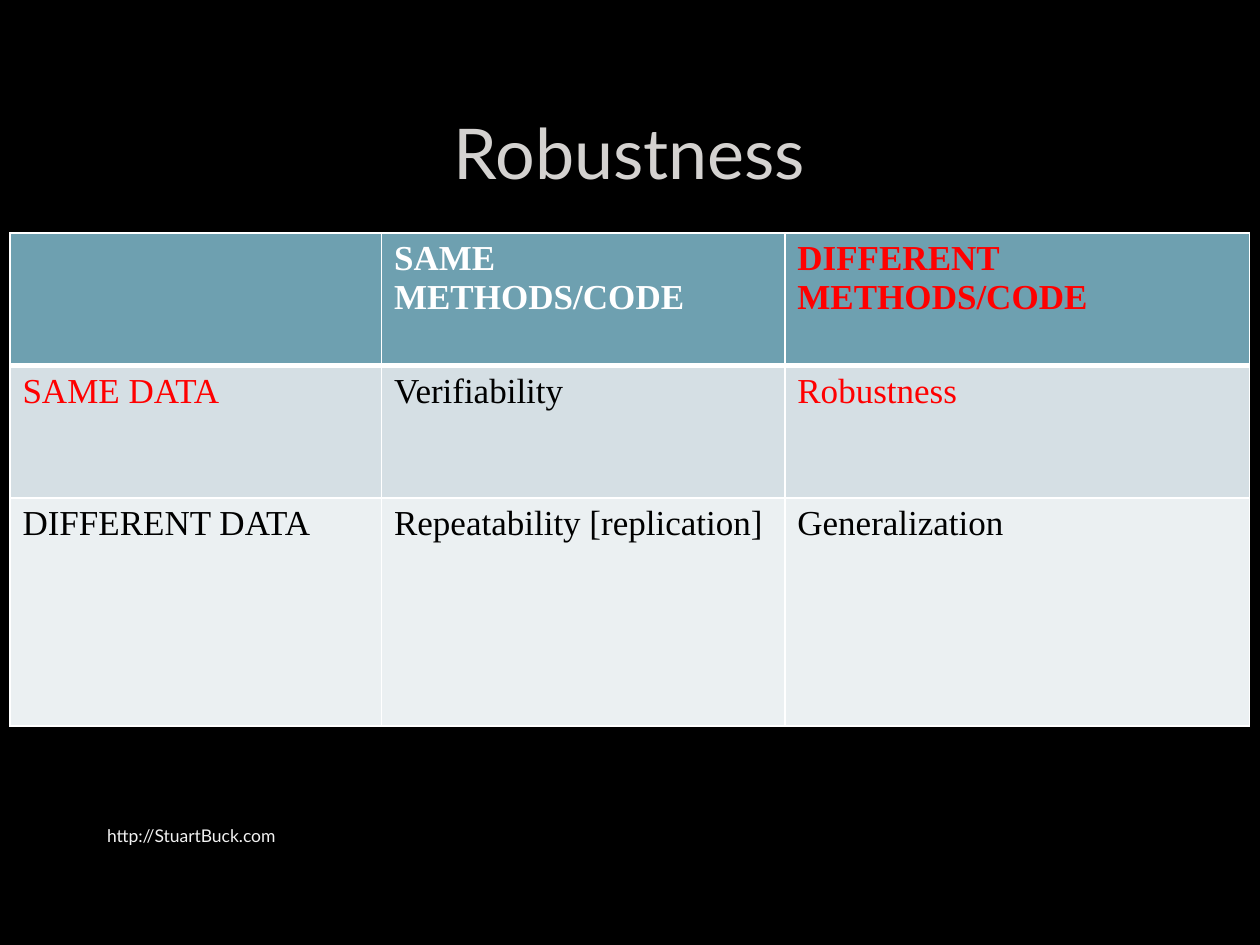
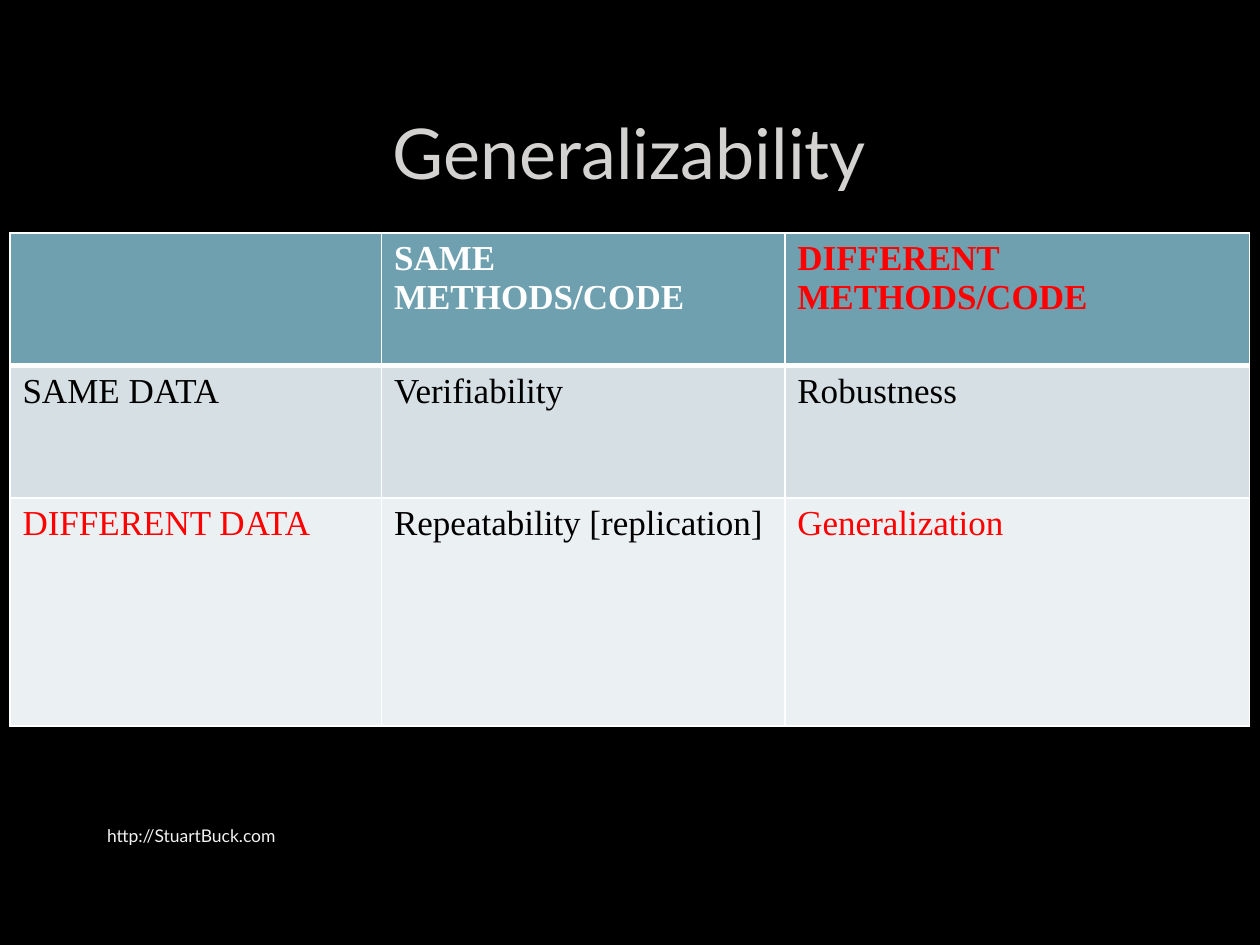
import dataclasses

import lxml.etree
import pptx
import pptx.dml.color
import pptx.enum.text
import pptx.oxml.ns
import pptx.util

Cm = pptx.util.Cm
Pt = pptx.util.Pt
qn = pptx.oxml.ns.qn

COLOURS = {
    "background": "000000",
    "title": "D4D2D0",
    "title_outline": "404040",
    "header": "6EA0B0",
    "same_data": "D5DFE4",
    "different_data": "EBF0F2",
    "border": "FFFFFF",
    "header_text": "FFFFFF",
    "body_text": "000000",
    "highlight": "FF0000",
    "address": "F2F2F2",
}
HEADING_FONT = "Lato"
TABLE_FONT = "Times New Roman"
COLUMN_WIDTHS = (7.49, 8.13, 9.37)
ROW_HEIGHTS = (2.67, 2.67, 4.6)
ROW_FILLS = ("header", "same_data", "different_data")
TERMS = (
    ("", "SAME METHODS/CODE", "DIFFERENT METHODS/CODE"),
    ("SAME DATA", "Verifiability", "Robustness"),
    ("DIFFERENT DATA", "Repeatability [replication]", "Generalization"),
)
HIGHLIGHTED_COLUMN = 2


@dataclasses.dataclass(frozen=True)
class Concept:
    title: str
    highlighted_row: int


@dataclasses.dataclass(frozen=True)
class Box:
    left: float
    top: float
    width: float
    height: float

    def lengths(self) -> tuple:
        return tuple(Cm(value) for value in dataclasses.astuple(self))


CONCEPTS = (Concept("Robustness", 1), Concept("Generalizability", 2))
TITLE_BOX = Box(1.91, 1.7, 21.56, 2.69)
TABLE_BOX = Box(0.2, 4.7, sum(COLUMN_WIDTHS), sum(ROW_HEIGHTS))
ADDRESS_BOX = Box(1.91, 16.33, 13.89, 1.02)


def rgb(name: str) -> pptx.dml.color.RGBColor:
    return pptx.dml.color.RGBColor.from_string(COLOURS[name])


def format_run(run, font: str, size: float, colour: str, bold: bool = False) -> None:
    run.font.name = font
    run.font.size = Pt(size)
    run.font.bold = bold
    run.font.color.rgb = rgb(colour)


def add_line_fill(line, colour: str):
    solid = lxml.etree.SubElement(line, qn("a:solidFill"))
    return lxml.etree.SubElement(solid, qn("a:srgbClr"), val=COLOURS[colour])


def outline_text(run) -> None:
    properties = run.font._element
    line = lxml.etree.SubElement(properties, qn("a:ln"), w=str(Pt(0.75)))
    outline = add_line_fill(line, "title_outline")
    lxml.etree.SubElement(outline, qn("a:alpha"), val="10000")
    properties.insert(0, line)


def add_title(slide, text: str) -> None:
    title = slide.shapes.title
    title.left, title.top, title.width, title.height = TITLE_BOX.lengths()
    frame = title.text_frame
    frame.text = text
    frame.vertical_anchor = pptx.enum.text.MSO_ANCHOR.MIDDLE
    frame.paragraphs[0].alignment = pptx.enum.text.PP_ALIGN.CENTER
    run = frame.paragraphs[0].runs[0]
    format_run(run, HEADING_FONT, 40, "title")
    outline_text(run)


def set_borders(cell, row: int) -> None:
    weights = {"L": 1, "R": 1, "T": 3 if row == 1 else 1, "B": 3 if row == 0 else 1}
    properties = cell._tc.get_or_add_tcPr()
    for side, weight in weights.items():
        line = lxml.etree.SubElement(properties, qn(f"a:ln{side}"), w=str(Pt(weight)))
        add_line_fill(line, "border")


def term_colour(row: int, column: int, highlighted_row: int) -> str:
    if row == 0:
        return "highlight" if column == HIGHLIGHTED_COLUMN else "header_text"
    if row == highlighted_row and column in (0, HIGHLIGHTED_COLUMN):
        return "highlight"
    return "body_text"


def add_terms(slide, highlighted_row: int) -> None:
    terms = slide.shapes.add_table(
        len(ROW_HEIGHTS), len(COLUMN_WIDTHS), *TABLE_BOX.lengths()
    ).table
    for column, width in zip(terms.columns, COLUMN_WIDTHS):
        column.width = Cm(width)
    for table_row, height in zip(terms.rows, ROW_HEIGHTS):
        table_row.height = Cm(height)
    for row, labels in enumerate(TERMS):
        for column, label in enumerate(labels):
            cell = terms.cell(row, column)
            set_borders(cell, row)
            cell.fill.solid()
            cell.fill.fore_color.rgb = rgb(ROW_FILLS[row])
            cell.text_frame.text = label
            colour = term_colour(row, column, highlighted_row)
            for run in cell.text_frame.paragraphs[0].runs:
                format_run(run, TABLE_FONT, 20, colour, bold=row == 0)


def add_address(slide) -> None:
    frame = slide.shapes.add_textbox(*ADDRESS_BOX.lengths()).text_frame
    frame.word_wrap = True
    frame.vertical_anchor = pptx.enum.text.MSO_ANCHOR.MIDDLE
    frame.text = "http://StuartBuck.com"
    format_run(frame.paragraphs[0].runs[0], HEADING_FONT, 10, "address")


def main() -> None:
    deck = pptx.Presentation()
    deck.slide_width, deck.slide_height = Cm(25.4), Cm(19.05)
    background = deck.slide_master.background.fill
    background.solid()
    background.fore_color.rgb = rgb("background")
    title_only = deck.slide_layouts.get_by_name("Title Only")
    for concept in CONCEPTS:
        slide = deck.slides.add_slide(title_only)
        add_title(slide, concept.title)
        add_terms(slide, concept.highlighted_row)
        add_address(slide)
    deck.save("out.pptx")


if __name__ == "__main__":
    main()
